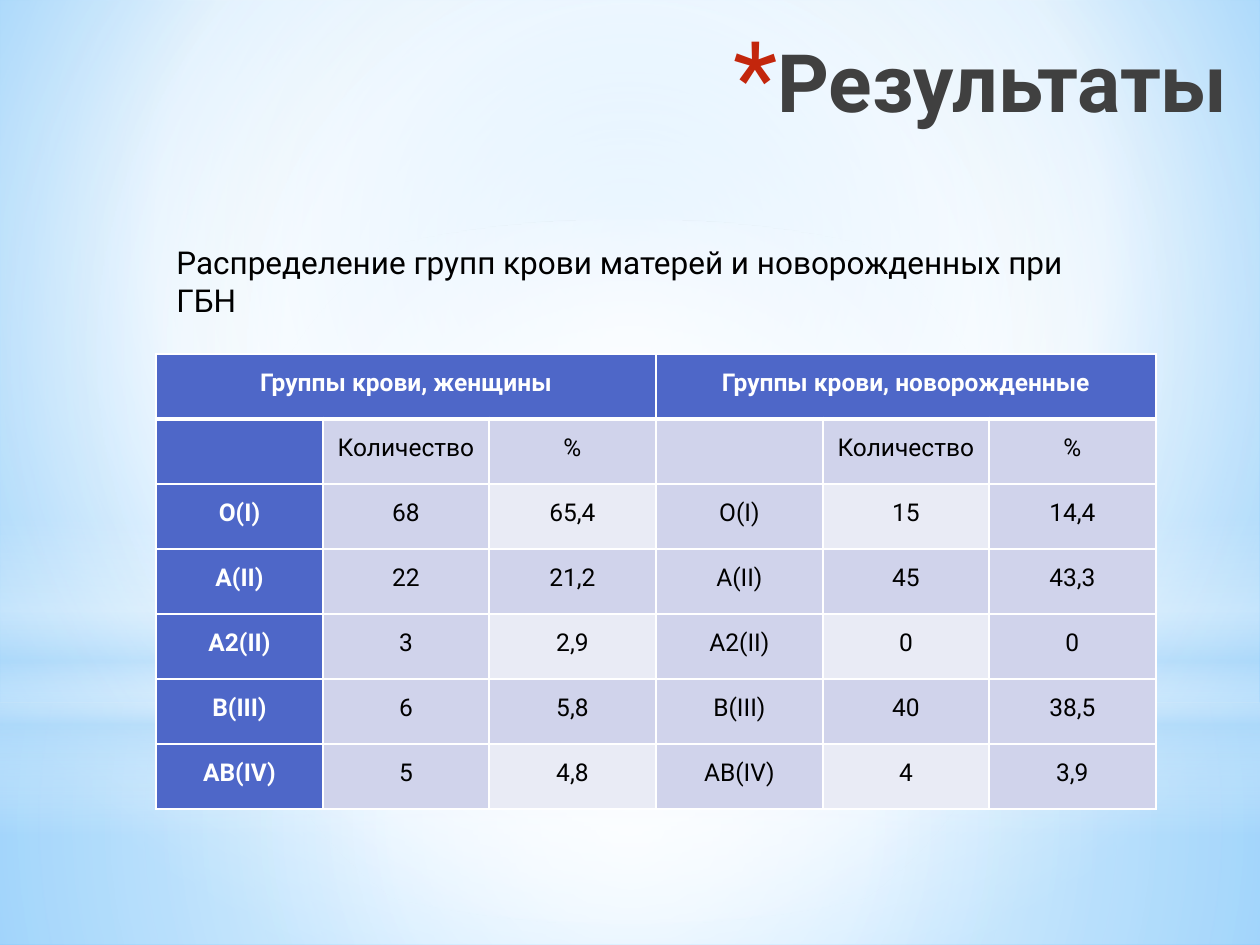
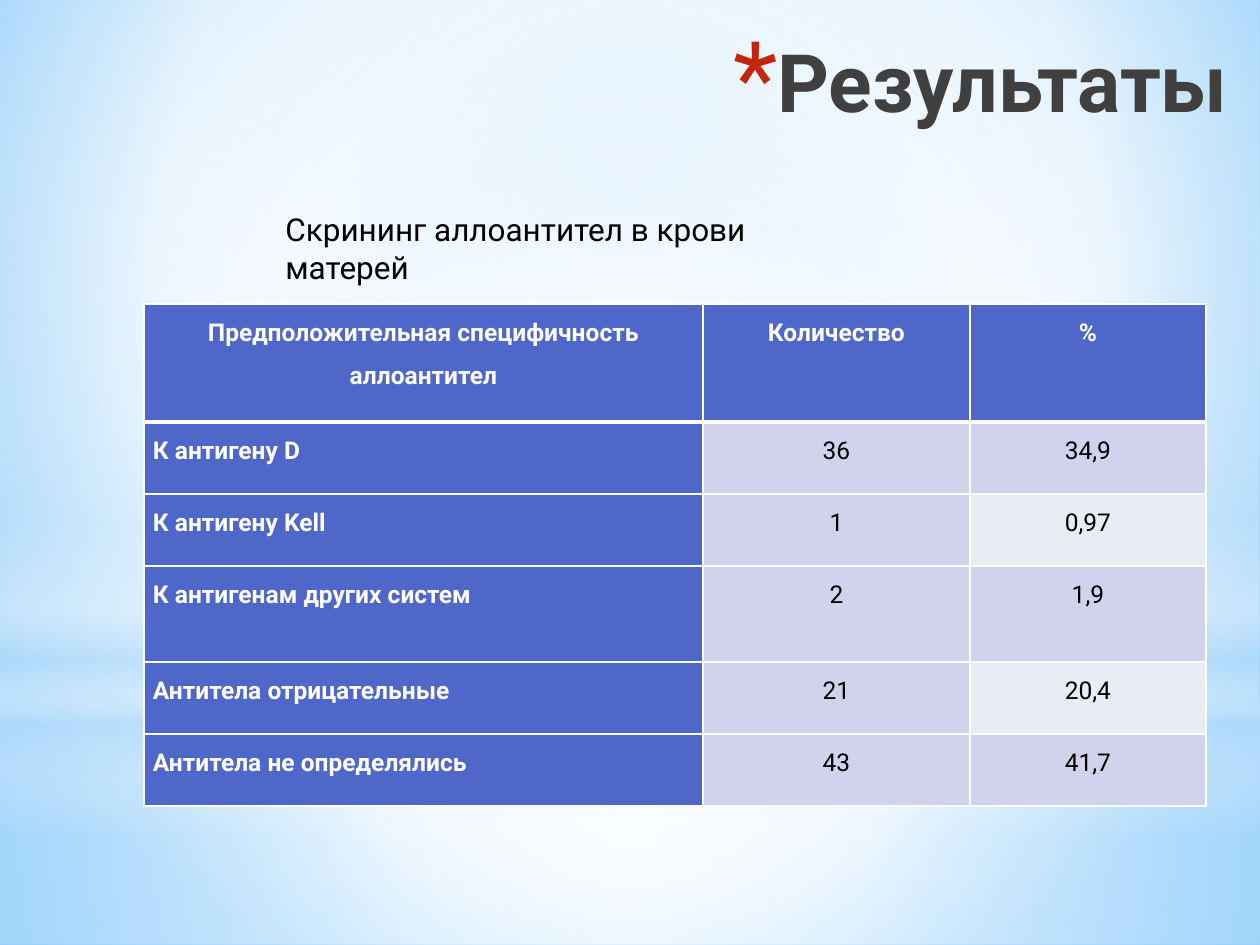
from lxml import etree
from pptx import Presentation, util as u
from pptx.dml.color import RGBColor
from pptx.enum import shapes, text
from pptx.oxml.ns import qn

SCALE = 914400 / 126
WHITE = RGBColor(0xFF, 0xFF, 0xFF)
BLACK = RGBColor(0x00, 0x00, 0x00)
CHARCOAL = RGBColor(0x40, 0x40, 0x40)
RED = RGBColor(0xC3, 0x26, 0x0C)
INDIGO = RGBColor(0x4E, 0x67, 0xC8)
LILAC = RGBColor(0xD0, 0xD3, 0xEB)
PALE = RGBColor(0xE9, 0xEB, 0xF5)
ICE = RGBColor(0xB4, 0xDC, 0xFA)
SKY = RGBColor(0x9E, 0xD5, 0xFF)
AZURE = RGBColor(0x5B, 0xB9, 0xFF)

RECT, OVAL = shapes.MSO_SHAPE.RECTANGLE, shapes.MSO_SHAPE.OVAL
LEFT, CENTER, RIGHT = text.PP_ALIGN.LEFT, text.PP_ALIGN.CENTER, text.PP_ALIGN.RIGHT
MIDDLE = (50, 50, 50, 50)
BACKDROP = [(0, SKY, 100), (60, WHITE, 100), (100, AZURE, 100)]
LAYERS = [
    (RECT, (0, 703, 1260, 242), [(0, WHITE, 91), (37, WHITE, 76), (100, ICE, 79)], MIDDLE),
    (RECT, (0, 0, 1260, 703), [(0, WHITE, 89), (48, WHITE, 62), (100, ICE, 79)], MIDDLE),
    (RECT, (0, 519, 1260, 315), [(0, WHITE, 0), (29, WHITE, 30), (45, ICE, 40),
                                 (55, WHITE, 26), (65, ICE, 60), (100, WHITE, 0)], None),
    (OVAL, (0, 220, 1260, 703), [(0, WHITE, 100), (56, WHITE, 0)], MIDDLE),
]

BLOOD_GROUPS = [
    ["Группы крови, женщины", "", "", "Группы крови, новорожденные", "", ""],
    ["", "Количество", "%", "", "Количество", "%"],
    ["O(I)", "68", "65,4", "O(I)", "15", "14,4"],
    ["A(II)", "22", "21,2", "A(II)", "45", "43,3"],
    ["A2(II)", "3", "2,9", "A2(II)", "0", "0"],
    ["B(III)", "6", "5,8", "B(III)", "40", "38,5"],
    ["AB(IV)", "5", "4,8", "AB(IV)", "4", "3,9"],
]
ANTIBODIES = [
    ["Предположительная специфичность аллоантител", "Количество", "%"],
    ["К антигену D", "36", "34,9"],
    ["К антигену Kell", "1", "0,97"],
    ["К антигенам других систем", "2", "1,9"],
    ["Антитела отрицательные", "21", "20,4"],
    ["Антитела не определялись", "43", "41,7"],
]


def px(n):
    return u.Emu(round(n * SCALE))


def child(parent, tag, **attrs):
    el = etree.SubElement(parent, qn(tag))
    for key, value in attrs.items():
        el.set(key, str(value))
    return el


class Deck:
    font = "Roboto"

    def __init__(self):
        self.prs = Presentation()
        self.prs.slide_width, self.prs.slide_height = px(1260), px(945)

    def slide(self):
        self.s = self.prs.slides.add_slide(self.prs.slide_layouts[6])
        fill = self.s.background.fill
        fill.solid()
        self.gradient(self.s.element.find(".//" + qn("p:bgPr")), BACKDROP, (20, 10, 20, 60))
        for kind, box, stops, focus in LAYERS:
            self.layer(kind, box, stops, focus)

    def gradient(self, props, stops, focus):
        solid = props.find(qn("a:solidFill"))
        grad = etree.Element(qn("a:gradFill"), rotWithShape="1")
        gs_list = child(grad, "a:gsLst")
        for pos, color, alpha in stops:
            gs = child(gs_list, "a:gs", pos=pos * 1000)
            clr = child(gs, "a:srgbClr", val=color)
            child(clr, "a:alpha", val=alpha * 1000)
        if focus:
            around = child(grad, "a:path", path="circle")
            sides = {side: pct * 1000 for side, pct in zip("ltrb", focus)}
            child(around, "a:fillToRect", **sides)
        else:
            child(grad, "a:lin", ang=90 * 60000, scaled=0)
        props.replace(solid, grad)

    def layer(self, kind, box, stops, focus):
        sp = self.s.shapes.add_shape(kind, *map(px, box))
        sp.shadow.inherit = False
        sp.line.fill.background()
        sp.fill.solid()
        self.gradient(sp.element.spPr, stops, focus)

    def put_text(self, tf, words, size, color, bold=False, **layout):
        p = tf.paragraphs[0]
        for key, value in layout.items():
            setattr(p, key, value)
        r = p.add_run()
        r.text = words
        for key, value in dict(name=self.font, size=u.Pt(size), bold=bold).items():
            setattr(r.font, key, value)
        r.font.color.rgb = color
        return p

    def textbox(self, box, words, size, color, **style):
        tf = self.s.shapes.add_textbox(*map(px, box)).text_frame
        tf.word_wrap = True
        return self.put_text(tf, words, size, color, **style)

    def title(self, words):
        p = self.textbox((343, 26, 897, 139), words, 46, CHARCOAL, bold=True, alignment=RIGHT)
        ppr = p._p.get_or_add_pPr()
        ppr.set("marL", str(px(44)))
        ppr.set("indent", str(px(-44)))
        child(child(ppr, "a:buClr"), "a:srgbClr", val=RED)
        child(ppr, "a:buSzPct", val=128000)
        child(ppr, "a:buFont", typeface=self.font)
        child(ppr, "a:buChar", char="*")

    def caption(self, box, words):
        self.textbox(box, words, 18, BLACK)

    def borders(self, cell, row):
        widths = {"L": 1, "R": 1, "T": 3 if row == 1 else 1, "B": 3 if row == 0 else 1}
        tcpr = cell._tc.get_or_add_tcPr()
        for i, (side, width) in enumerate(widths.items()):
            ln = child(tcpr, "a:ln" + side, w=u.Pt(width))
            child(child(ln, "a:solidFill"), "a:srgbClr", val=WHITE)
            tcpr.insert(i, ln)

    def table(self, left, top, cols, rows, data, spans=(), label_align=CENTER):
        box = map(px, (left, top, sum(cols), sum(rows)))
        tbl = self.s.shapes.add_table(len(rows), len(cols), *box).table
        tbl.horz_banding = False
        for col, width in zip(tbl.columns, cols):
            col.width = px(width)
        for row, height in zip(tbl.rows, rows):
            row.height = px(height)
        for i, values in enumerate(data):
            for j, value in enumerate(values):
                self.cell(tbl.cell(i, j), i, j, value, label_align)
        for first, last in spans:
            tbl.cell(0, first).merge(tbl.cell(0, last))

    def cell(self, cell, i, j, value, label_align):
        head = i == 0 or j == 0
        light = i % 2 == 0 and j in (2, 4)
        margins = dict(margin_left=px(9), margin_right=px(9), margin_top=0, margin_bottom=0)
        for key, margin in margins.items():
            setattr(cell, key, margin)
        cell.fill.solid()
        cell.fill.fore_color.rgb = INDIGO if head else PALE if light else LILAC
        self.borders(cell, i)
        if value:
            self.put_text(cell.text_frame, value, 14, WHITE if head else BLACK, bold=head,
                          alignment=label_align if i and j == 0 else CENTER, line_spacing=1.5)


def main():
    deck = Deck()

    deck.slide()
    deck.title("Результаты")
    deck.table(156, 354, [167, 166, 167] * 2, [65] * 7, BLOOD_GROUPS, spans=[(0, 2), (3, 5)])
    deck.caption((164, 237, 973, 50), "Распределение групп крови матерей и новорожденных при ГБН")

    deck.slide()
    deck.table(144, 304, [559, 267, 236], [118, 72, 72, 96, 72, 72], ANTIBODIES,
               label_align=LEFT)
    deck.title("Результаты")
    deck.caption((273, 204, 612, 50), "Скрининг аллоантител в крови матерей")

    deck.prs.save("out.pptx")


if __name__ == "__main__":
    main()
